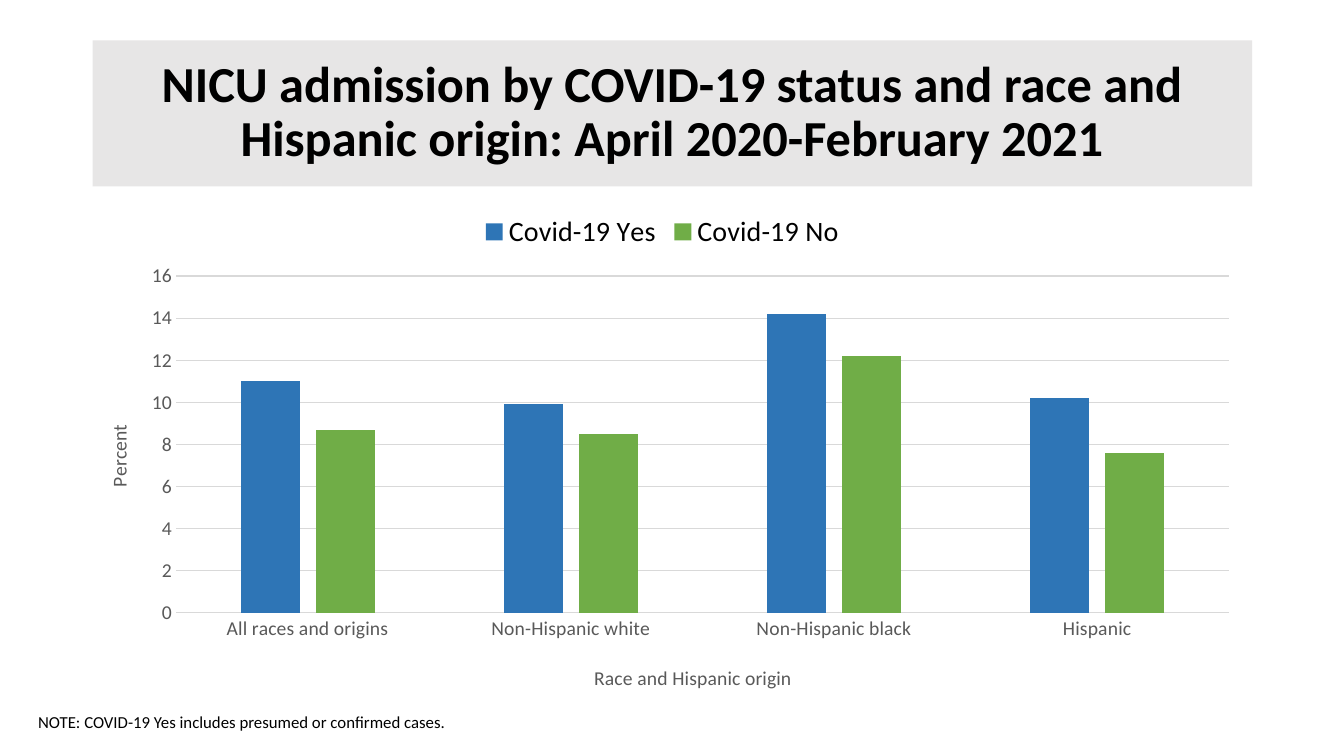
import pptx
import pptx.chart.data
import pptx.dml.color
import pptx.enum.chart
import pptx.enum.shapes
import pptx.enum.text
import pptx.oxml
import pptx.oxml.ns
import pptx.util

BLACK = pptx.dml.color.RGBColor(0x00, 0x00, 0x00)
GRAY_TEXT = pptx.dml.color.RGBColor(0x59, 0x59, 0x59)
GRID_GRAY = pptx.dml.color.RGBColor(0xD9, 0xD9, 0xD9)
BANNER_GRAY = pptx.dml.color.RGBColor(0xE7, 0xE6, 0xE6)
BLUE = pptx.dml.color.RGBColor(0x2E, 0x75, 0xB6)
GREEN = pptx.dml.color.RGBColor(0x70, 0xAD, 0x47)
FONT = "Calibri"
Inches = pptx.util.Inches


def style_font(font, size, color, bold=False):
    font.name = FONT
    font.size = pptx.util.Pt(size)
    font.bold = bold
    font.color.rgb = color


def place_in_chart(element, index, **shares):
    """Fix a chart part at shares of the chart's width and height."""
    for layout in element.findall(pptx.oxml.ns.qn("c:layout")):
        element.remove(layout)
    target = '<c:layoutTarget val="inner"/>' if "w" in shares else ""
    modes = "".join(f'<c:{side}Mode val="edge"/>' for side in "xy")
    values = "".join(f'<c:{side} val="{share}"/>' for side, share in shares.items())
    element.insert(index, pptx.oxml.parse_xml(
        f'<c:layout {pptx.oxml.ns.nsdecls("c")}><c:manualLayout>'
        f"{target}{modes}{values}</c:manualLayout></c:layout>"))


presentation = pptx.Presentation()
presentation.slide_width = Inches(13.33)
presentation.slide_height = Inches(7.5)
slide = presentation.slides.add_slide(presentation.slide_layouts[6])

# Title banner
banner = slide.shapes.add_shape(
    pptx.enum.shapes.MSO_SHAPE.RECTANGLE,
    Inches(0.92), Inches(0.4), Inches(11.5), Inches(1.45))
banner.shadow.inherit = False
banner.fill.solid()
banner.fill.fore_color.rgb = BANNER_GRAY
banner.line.fill.background()
banner.text_frame.word_wrap = True
banner.text_frame.vertical_anchor = pptx.enum.text.MSO_ANCHOR.MIDDLE
banner.text_frame.text = ("NICU admission by COVID-19 status and race and "
                          "Hispanic origin: April 2020-February 2021")
paragraph = banner.text_frame.paragraphs[0]
paragraph.alignment = pptx.enum.text.PP_ALIGN.CENTER
paragraph.line_spacing = 0.9
style_font(paragraph.runs[0].font, 36, BLACK, bold=True)

# Column chart
chart_data = pptx.chart.data.CategoryChartData()
chart_data.categories = ["All races and origins", "Non-Hispanic white",
                         "Non-Hispanic black", "Hispanic"]
chart_data.add_series("Covid-19 Yes", (11, 9.9, 14.2, 10.2))
chart_data.add_series("Covid-19 No", (8.7, 8.5, 12.2, 7.6))
chart = slide.shapes.add_chart(
    pptx.enum.chart.XL_CHART_TYPE.COLUMN_CLUSTERED,
    Inches(0.73), Inches(2), Inches(11.68), Inches(4.99), chart_data).chart
style_font(chart.font, 14, BLACK)
chart.has_title = False
plot = chart.plots[0]
plot.gap_width = 219
plot.overlap = -27
plot.vary_by_categories = False
for series, color in zip(plot.series, (BLUE, GREEN)):
    series.format.fill.solid()
    series.format.fill.fore_color.rgb = color
place_in_chart(chart.element.find(".//" + pptx.oxml.ns.qn("c:plotArea")), 0,
               x=0.087, y=0.148, w=0.894, h=0.67)

# Legend
chart.has_legend = True
chart.legend.position = pptx.enum.chart.XL_LEGEND_POSITION.TOP
chart.legend.include_in_layout = False
style_font(chart.legend.font, 20, BLACK)

# Axes
category_axis, value_axis = chart.category_axis, chart.value_axis
for axis, title, x, y in (
        (category_axis, "Race and Hispanic origin", 0.439, 0.913),
        (value_axis, "Percent", 0.024, 0.436)):
    axis.major_tick_mark = pptx.enum.chart.XL_TICK_MARK.NONE
    axis.minor_tick_mark = pptx.enum.chart.XL_TICK_MARK.NONE
    style_font(axis.tick_labels.font, 14, GRAY_TEXT)
    axis.axis_title.text_frame.text = title
    style_font(axis.axis_title.text_frame.paragraphs[0].runs[0].font, 14, GRAY_TEXT)
    place_in_chart(axis.axis_title.format.element if hasattr(axis.axis_title.format, "element")
                   else axis.axis_title.element, 1, x=x, y=y)
value_axis.minimum_scale = 0
value_axis.maximum_scale = 16
value_axis.major_unit = 2
value_axis.format.line.fill.background()
for line in (category_axis.format.line, value_axis.major_gridlines.format.line):
    line.color.rgb = GRID_GRAY
    line.width = pptx.util.Pt(0.75)

# Note
note = slide.shapes.add_textbox(Inches(0.28), Inches(7.01), Inches(11.3), Inches(0.3))
note.text_frame.word_wrap = True
note.text_frame.auto_size = pptx.enum.text.MSO_AUTO_SIZE.SHAPE_TO_FIT_TEXT
note.text_frame.text = "NOTE: COVID-19 Yes includes presumed or confirmed cases."
style_font(note.text_frame.paragraphs[0].runs[0].font, 12, BLACK)

presentation.save("out.pptx")
